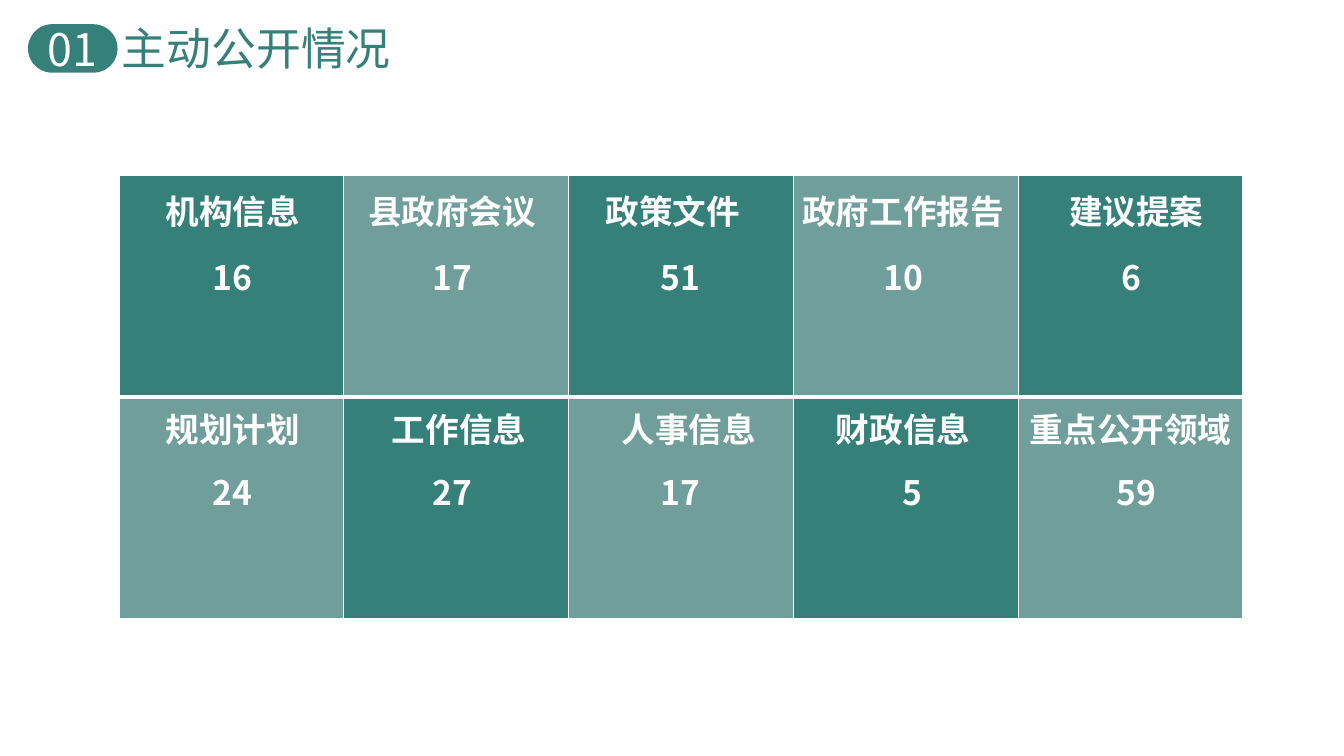
from lxml import etree
from pptx import Presentation
from pptx import util as u
from pptx.dml.color import RGBColor
from pptx.enum import shapes, text
from pptx.oxml import ns

FONT = "Noto Sans CJK SC"
DARK, LIGHT, WHITE = "36807A", "709E9A", "FFFFFF"
COLUMNS = 5
LABEL_WIDTHS = {5: 156, 6: 163}
ROWS = [
    {"label_top": 7.2, "number_top": 54.7, "items": [
        ("机构信息", 1, "16", 1), ("县政府会议", -3, "17", -2.5),
        ("政策文件", -6, "51", -0.5), ("政府工作报告", -2, "10", -2),
        ("建议提案", 4, "6", 0.5)]},
    {"label_top": 5, "number_top": 49.7, "items": [
        ("规划计划", 1, "24", 1), ("工作信息", 2, "27", -2.5),
        ("人事信息", 5.5, "17", -0.5), ("财政信息", -2, "5", 4.5),
        ("重点公开领域", 0, "59", 4)]},
]


def color(value):
    return RGBColor.from_string(value)


def points(*values):
    return [u.Pt(value) for value in values]


def write(shape, wording, size, ink, bold=False, align=text.PP_ALIGN.CENTER):
    shape.text_frame.word_wrap = True
    paragraph = shape.text_frame.paragraphs[0]
    paragraph.alignment = align
    run = paragraph.add_run()
    run.text = wording
    for name, value in {"name": FONT, "size": u.Pt(size), "bold": bold}.items():
        setattr(run.font, name, value)
    run.font.color.rgb = color(ink)
    latin = run.font._element.find(ns.qn("a:latin"))
    east_asian = etree.Element(ns.qn("a:ea"), typeface=FONT)
    latin.addnext(east_asian)


def add_text(parent, box, wording, size, ink, **formats):
    shape = parent.add_textbox(*points(*box))
    write(shape, wording, size, ink, **formats)
    shape.text_frame.auto_size = text.MSO_AUTO_SIZE.SHAPE_TO_FIT_TEXT


def add_heading(slide, left, top, number, wording):
    group = slide.shapes.add_group_shape()
    pill = group.shapes.add_shape(
        shapes.MSO_SHAPE.ROUNDED_RECTANGLE, *points(left, top + 5.8, 64, 34.6))
    pill.adjustments[0] = 0.5
    pill.shadow.inherit = False
    pill.fill.solid()
    pill.fill.fore_color.rgb = color(DARK)
    pill.line.fill.background()
    pill.text_frame.vertical_anchor = text.MSO_ANCHOR.MIDDLE
    write(pill, number, 32, WHITE)
    add_text(group.shapes, (left + 60, top, 289, 46), wording, 32, DARK,
             align=text.PP_ALIGN.LEFT)


def add_borders(cell, widths):
    properties = cell._tc.get_or_add_tcPr()
    for index, (side, width) in enumerate(widths.items()):
        line = etree.Element(ns.qn(f"a:ln{side}"), w=str(u.Pt(width)))
        fill = etree.SubElement(line, ns.qn("a:solidFill"))
        etree.SubElement(fill, ns.qn("a:srgbClr"), val=WHITE)
        properties.insert(index, line)


def add_tiles(slide, left, top, width, height):
    frame = slide.shapes.add_table(
        len(ROWS), COLUMNS, *points(left, top, width, height))
    table = frame.table
    table.first_row = table.horz_banding = False
    column_width, row_height = width / COLUMNS, height / len(ROWS)
    for column in table.columns:
        column.width = u.Pt(column_width)
    for row_index, row in enumerate(ROWS):
        table.rows[row_index].height = u.Pt(row_height)
        row_top = top + row_index * row_height
        for column_index, item in enumerate(row["items"]):
            cell = table.cell(row_index, column_index)
            cell.fill.solid()
            cell.fill.fore_color.rgb = color((DARK, LIGHT)[(row_index + column_index) % 2])
            add_borders(cell, {"L": 1, "R": 1, "T": 3 if row_index else 1,
                               "B": 1 if row_index else 3})
            center = left + (column_index + 0.5) * column_width
            label, label_shift, number, number_shift = item
            for wording, shift, offset in ((label, label_shift, row["label_top"]),
                                           (number, number_shift, row["number_top"])):
                text_width = LABEL_WIDTHS.get(len(wording), 130)
                box = (center + shift - text_width / 2, row_top + offset, text_width, 36)
                add_text(slide.shapes, box, wording, 24, WHITE, bold=True)


def main():
    presentation = Presentation()
    presentation.slide_width, presentation.slide_height = points(960, 540)
    slide = presentation.slides.add_slide(presentation.slide_layouts[6])
    add_heading(slide, 20, 11.5, "01", "主动公开情况")
    add_tiles(slide, 85, 125.3, 803, 316.8)
    presentation.save("out.pptx")


if __name__ == "__main__":
    main()
